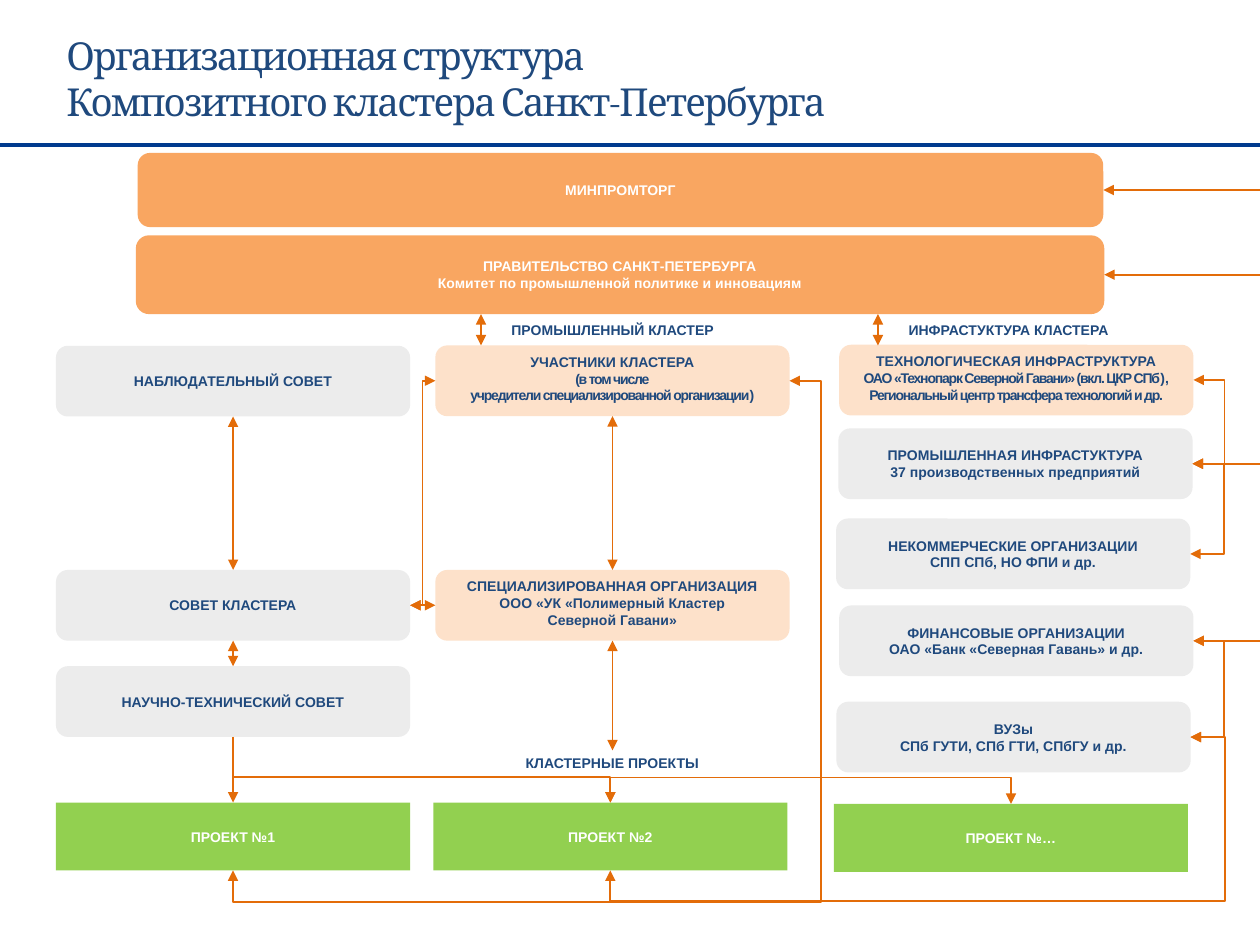
from dataclasses import dataclass
from typing import Optional

from lxml.etree import SubElement
from pptx import Presentation
from pptx.dml.color import RGBColor
from pptx.enum.shapes import MSO_CONNECTOR as Connector, MSO_SHAPE as Preset
from pptx.enum.text import MSO_ANCHOR as Anchor, MSO_AUTO_SIZE as AutoSize, PP_ALIGN as Align
from pptx.oxml.ns import qn
from pptx.util import Pt

NAVY = RGBColor(0x1F, 0x49, 0x7D)
RULE = RGBColor(0x00, 0x3A, 0x8E)
ARROW = RGBColor(0xE3, 0x6C, 0x09)
ORANGE = RGBColor(0xF9, 0xA6, 0x61)
PEACH = RGBColor(0xFD, 0xE1, 0xCA)
GREY = RGBColor(0xEC, 0xEC, 0xEC)
GREEN = RGBColor(0x92, 0xD0, 0x50)
WHITE = RGBColor(0xFF, 0xFF, 0xFF)

TOP, LEFT, BOTTOM, RIGHT = range(4)
SLIDE_WIDTH, SLIDE_HEIGHT = 720, 540
CARD_WIDTH, CARD_HEIGHT = 202.4, 40.4
TIGHT = -70


@dataclass(frozen=True)
class Run:
    text: str
    spacing: int = 0


@dataclass(frozen=True)
class Box:
    key: str
    left: float
    top: float
    lines: tuple
    fill: Optional[RGBColor] = GREY
    width: float = CARD_WIDTH
    height: float = CARD_HEIGHT
    color: RGBColor = NAVY
    preset: Preset = Preset.ROUNDED_RECTANGLE
    anchor: Anchor = Anchor.MIDDLE


@dataclass(frozen=True)
class Link:
    begin: str
    begin_site: int
    end: str
    end_site: int
    bends: tuple = ()
    head: bool = True


def project(key: str, left: float, top: float, text: str) -> Box:
    return Box(key, left, top, (text,), GREEN, height=38.8, color=WHITE, preset=Preset.RECTANGLE)


def label(key: str, left: float, top: float, text: str, anchor: Anchor = Anchor.MIDDLE) -> Box:
    return Box(key, left, top, (text,), None, height=20.4, anchor=anchor)


BOXES = (
    Box("ministry", 78.7, 87.4, ("МИНПРОМТОРГ",), ORANGE, 551.8, 42.4, WHITE),
    Box("government", 77.6, 134.5, ("ПРАВИТЕЛЬСТВО САНКТ-ПЕТЕРБУРГА",
        "Комитет по промышленной политике и инновациям"), ORANGE, 553.4, 45, WHITE),
    Box("board", 32, 197.6, ("НАБЛЮДАТЕЛЬНЫЙ СОВЕТ",)),
    Box("council", 32, 325.7, ("СОВЕТ КЛАСТЕРА",)),
    Box("science", 32, 380.7, ("НАУЧНО-ТЕХНИЧЕСКИЙ СОВЕТ",)),
    Box("members", 248.8, 197.4, ("УЧАСТНИКИ КЛАСТЕРА", (Run("(в том числе", TIGHT),),
        (Run("учредители специализированной организации", TIGHT), Run(")"))), PEACH, anchor=Anchor.TOP),
    Box("operator", 248.8, 325.7, ("СПЕЦИАЛИЗИРОВАННАЯ ОРГАНИЗАЦИЯ",
        "ООО «УК «Полимерный Кластер", "Северной Гавани»"), PEACH, anchor=Anchor.TOP),
    Box("technology", 479.6, 197, ("ТЕХНОЛОГИЧЕСКАЯ ИНФРАСТРУКТУРА",
        (Run("ОАО «Технопарк Северной Гавани» (вкл. ЦКР СПб", TIGHT), Run("),")),
        (Run("Региональный центр трансфера технологий и др.", TIGHT),)), PEACH, anchor=Anchor.TOP),
    Box("industry", 479.1, 244.8, ("ПРОМЫШЛЕННАЯ ИНФРАСТУКТУРА", "37 производственных предприятий")),
    Box("nonprofit", 477.8, 296.3, ("НЕКОММЕРЧЕСКИЕ ОРГАНИЗАЦИИ", "СПП СПб, НО ФПИ и др.")),
    Box("finance", 479.6, 346, ("ФИНАНСОВЫЕ ОРГАНИЗАЦИИ", "ОАО «Банк «Северная Гавань» и др.")),
    Box("universities", 478, 401, ("ВУЗы", "СПб ГУТИ, СПб ГТИ, СПбГУ и др.")),
    project("project 1", 32, 458.6, "ПРОЕКТ №1"),
    project("project 2", 247.6, 458.6, "ПРОЕКТ №2"),
    project("project n", 476.5, 459.4, "ПРОЕКТ №…"),
    label("industrial cluster", 249, 178.6, "ПРОМЫШЛЕННЫЙ КЛАСТЕР"),
    label("cluster infrastructure", 475.2, 178.6, "ИНФРАСТУКТУРА КЛАСТЕРА"),
    label("cluster projects", 248.8, 428.8, "КЛАСТЕРНЫЕ ПРОЕКТЫ", Anchor.TOP),
)

LINKS = (
    Link("board", BOTTOM, "council", TOP),
    Link("council", BOTTOM, "science", TOP),
    Link("science", BOTTOM, "project 1", TOP, head=False),
    Link("members", BOTTOM, "operator", TOP),
    Link("operator", BOTTOM, "cluster projects", TOP),
    Link("council", RIGHT, "operator", LEFT),
    Link("members", LEFT, "council", RIGHT, (241.5,)),
    Link("ministry", RIGHT, "government", RIGHT, (SLIDE_WIDTH,)),
    Link("industry", RIGHT, "finance", RIGHT, (SLIDE_WIDTH,)),
    Link("industry", RIGHT, "technology", RIGHT, (699.4,)),
    Link("industry", RIGHT, "nonprofit", RIGHT, (699.4,)),
    Link("finance", RIGHT, "universities", RIGHT, (699.7,)),
    Link("members", RIGHT, "project 1", BOTTOM, (469.3, 515.4)),
    Link("universities", RIGHT, "project 2", BOTTOM, (700, 515)),
    Link("project 2", TOP, "project n", TOP, (444.2,)),
    Link("science", BOTTOM, "project 2", TOP, (444,), head=False),
)

GOVERNMENT_ARROWS = (274.9, 501.7)


def add_run(paragraph, run: Run, size: float, name: str, color: RGBColor, bold: bool) -> None:
    added = paragraph.add_run()
    added.text = run.text
    font = added.font
    font.size, font.name, font.bold = Pt(size), name, bold
    font.color.rgb = color
    if run.spacing:
        added._r.get_or_add_rPr().set("spc", str(run.spacing))


def format_frame(frame, anchor: Anchor) -> None:
    frame.word_wrap = True
    frame.auto_size = AutoSize.NONE
    frame.vertical_anchor = anchor
    frame.margin_left = frame.margin_right = Pt(5)
    frame.margin_top = frame.margin_bottom = Pt(2.6)


def add_box(slide, box: Box):
    place = [Pt(value) for value in (box.left, box.top, box.width, box.height)]
    if box.fill is None:
        shape = slide.shapes.add_textbox(*place)
    else:
        shape = slide.shapes.add_shape(box.preset, *place)
        shape.shadow.inherit = False
        shape.fill.solid()
        shape.fill.fore_color.rgb = box.fill
        shape.line.fill.background()
    frame = shape.text_frame
    format_frame(frame, box.anchor)
    for index, line in enumerate(box.lines):
        paragraph = frame.add_paragraph() if index else frame.paragraphs[0]
        paragraph.alignment = Align.CENTER
        for run in (Run(line),) if isinstance(line, str) else line:
            add_run(paragraph, run, 8, "Arial", box.color, True)
    return shape


def add_line(slide, kind: Connector, start: tuple, end: tuple, color: RGBColor = ARROW,
             width: float = 1, head: bool = True, tail: bool = True):
    connector = slide.shapes.add_connector(kind, *(Pt(value) for value in start + end))
    connector.line.color.rgb = color
    connector.line.width = Pt(width)
    line = connector.line._get_or_add_ln()
    for tag, wanted in (("a:headEnd", head), ("a:tailEnd", tail)):
        if wanted:
            SubElement(line, qn(tag)).set("type", "triangle")
    SubElement(connector._element.spPr, qn("a:effectLst"))
    return connector


def bend_connector(connector, link: Link) -> None:
    x1, y1, x2, y2 = (value.pt for value in (
        connector.begin_x, connector.begin_y, connector.end_x, connector.end_y))
    properties = connector._element.spPr
    geometry = properties.find(qn("a:prstGeom"))
    geometry.set("prst", f"bentConnector{len(link.bends) + 2}")
    spans = ((x1, x2), (y1, y2))
    if link.begin_site in (TOP, BOTTOM):
        spans = spans[::-1]
        width, height = abs(y2 - y1), abs(x2 - x1)
        connector.left, connector.top = Pt((x1 + x2 - width) / 2), Pt((y1 + y2 - height) / 2)
        connector.width, connector.height = Pt(width), Pt(height)
        transform = properties.find(qn("a:xfrm"))
        transform.set("rot", "16200000")
        transform.set("flipH", "1")
    guides = geometry.find(qn("a:avLst"))
    for index, (bend, (start, end)) in enumerate(zip(link.bends, spans), 1):
        guide = SubElement(guides, qn("a:gd"))
        guide.set("name", f"adj{index}")
        guide.set("fmla", f"val {round((bend - start) / (end - start) * 100000)}")


def add_link(slide, link: Link, shapes: dict) -> None:
    kind = Connector.ELBOW if link.bends else Connector.STRAIGHT
    connector = add_line(slide, kind, (0, 0), (0, 0), head=link.head)
    connector.begin_connect(shapes[link.begin], link.begin_site)
    connector.end_connect(shapes[link.end], link.end_site)
    if link.bends:
        bend_connector(connector, link)


def add_title(slide) -> None:
    title = slide.shapes.title
    title.left, title.top, title.width, title.height = Pt(33), Pt(15.5), Pt(635), Pt(58.5)
    format_frame(title.text_frame, Anchor.MIDDLE)
    paragraph = title.text_frame.paragraphs[0]
    paragraph.alignment = Align.LEFT
    add_run(paragraph, Run("Организационная структура", -100), 22, "Cambria", NAVY, False)
    paragraph.add_line_break()
    add_run(paragraph, Run("Композитного кластера Санкт-Петербурга", -100), 22, "Cambria", NAVY, False)


def main() -> None:
    presentation = Presentation()
    presentation.slide_width, presentation.slide_height = Pt(SLIDE_WIDTH), Pt(SLIDE_HEIGHT)
    slide = presentation.slides.add_slide(presentation.slide_layouts[5])
    add_title(slide)
    add_line(slide, Connector.STRAIGHT, (0, 82.8), (SLIDE_WIDTH, 82.8), RULE, 2.5, False, False)
    shapes = {box.key: add_box(slide, box) for box in BOXES}
    for link in LINKS:
        add_link(slide, link, shapes)
    for x in GOVERNMENT_ARROWS:
        add_line(slide, Connector.STRAIGHT, (x, 197.4), (x, 179.5))
    presentation.save("out.pptx")


if __name__ == "__main__":
    main()
